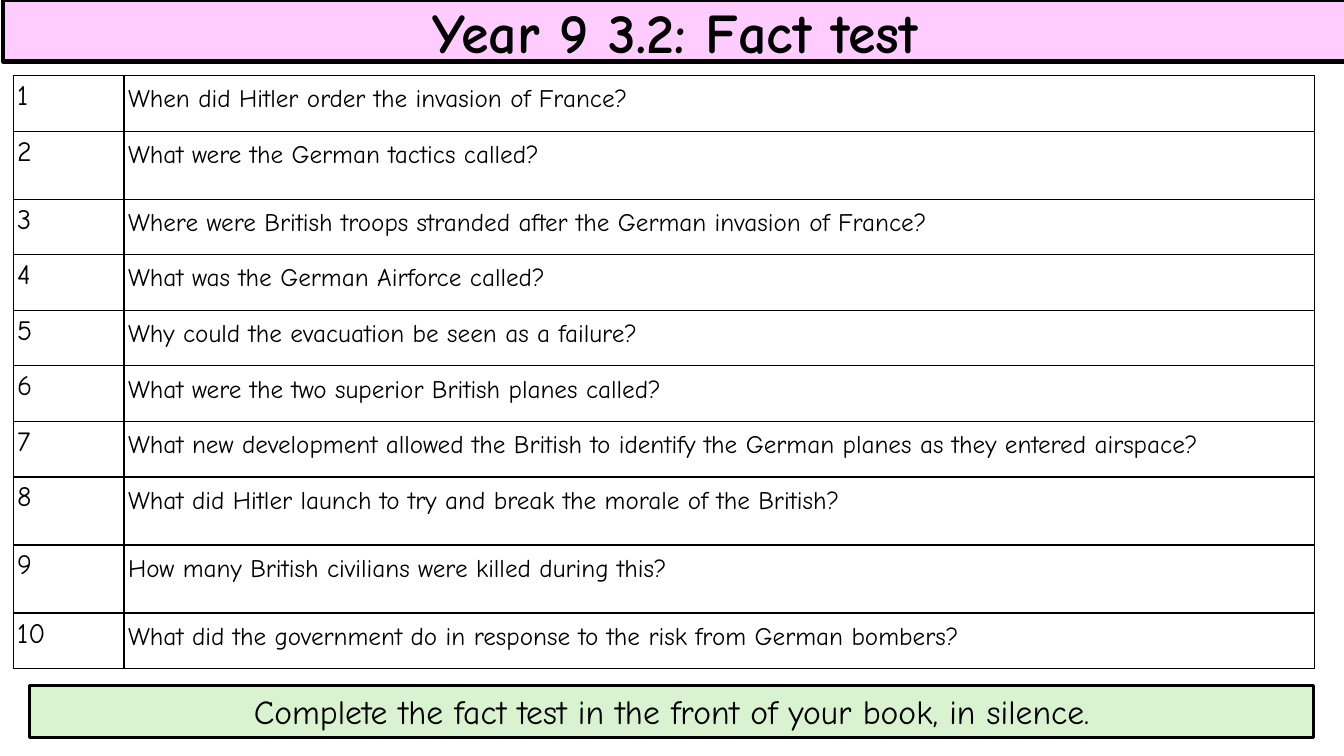
from collections import namedtuple

from lxml.etree import SubElement
from pptx import Presentation
from pptx.dml.color import RGBColor
from pptx.enum.shapes import MSO_SHAPE as Shape
from pptx.enum.text import MSO_ANCHOR as Anchor, MSO_AUTO_SIZE as AutoSize, PP_ALIGN as Align
from pptx.oxml.ns import qn
from pptx.util import Inches, Pt

BLACK = RGBColor(0x00, 0x00, 0x00)
WHITE = RGBColor(0xFF, 0xFF, 0xFF)
PINK = RGBColor(0xFF, 0xCC, 0xFF)
GREEN = RGBColor(0xD9, 0xF2, 0xD0)

WIDTH, HEIGHT = Inches(13.33), Inches(7.5)
Box = namedtuple("Box", "left top width height")

HEADING = "Year 9 3.2: Fact test"
TASK = "Complete the fact test in the front of your book, in silence."
QUESTIONS = [
    "When did Hitler order the invasion of France?",
    "What were the German tactics called?",
    "Where were British troops stranded after the German invasion of France?",
    "What was the German Airforce called?",
    "Why could the evacuation be seen as a failure?",
    "What were the two superior British planes called?",
    "What new development allowed the British to identify the German planes as they entered airspace?",
    "What did Hitler launch to try and break the morale of the British?",
    "How many British civilians were killed during this?",
    "What did the government do in response to the risk from German bombers?",
]
TALL_QUESTIONS = {2, 8, 9}
ROW_SHARE, TALL_ROW_SHARE = 7.35, 9
NUMBER_SHARE = 8.25

NUMBER_FORMAT = {
    "font": {"size": Pt(20)},
    "paragraph": {"line_spacing": 1.15, "space_after": Pt(10)},
    "cell": {"margin_top": 0, "margin_bottom": 0},
}
QUESTION_FORMAT = {
    "font": {"size": Pt(18)},
    "paragraph": {"line_spacing": 1.19, "space_after": Pt(6)},
    "cell": {"margin_top": Inches(0.04), "margin_bottom": Inches(0.04)},
}


def across(percent):
    """Turn a percentage of the slide's width into a length."""
    return int(WIDTH * percent / 100)


def down(percent):
    """Turn a percentage of the slide's height into a length."""
    return int(HEIGHT * percent / 100)


def place(left, top, width, height):
    """Make a box from percentages of the slide's size."""
    return Box(across(left), down(top), across(width), down(height))


def apply(target, values):
    """Set every attribute in values on the target."""
    for attribute, value in values.items():
        setattr(target, attribute, value)


def write(frame, words, font, paragraph):
    """Write one formatted paragraph in a text frame."""
    line = frame.paragraphs[0]
    apply(line, paragraph)
    run = line.add_run()
    run.text = words
    apply(run.font, {"name": "Comic Neue", "bold": False, **font})
    run.font.color.rgb = BLACK


def fill_banner(banner, words, colour, outline, font, anchor):
    """Colour and outline a banner and centre its words."""
    banner.fill.solid()
    banner.fill.fore_color.rgb = colour
    banner.line.color.rgb = BLACK
    banner.line.width = outline
    apply(banner.text_frame, {"word_wrap": True, "auto_size": AutoSize.NONE,
                              "vertical_anchor": anchor})
    write(banner.text_frame, words, font, {"alignment": Align.CENTER})


def add_heading(slide, box):
    """Place the slide's title across the top."""
    heading = slide.shapes.title
    apply(heading, box._asdict())
    fill_banner(heading, HEADING, PINK, Pt(3), {"size": Pt(40), "bold": True}, Anchor.MIDDLE)


def add_task(slide, box):
    """Place the instruction below the questions."""
    task = slide.shapes.add_shape(Shape.RECTANGLE, *box)
    task.shadow.inherit = False
    fill_banner(task, TASK, GREEN, Pt(2.25), {"size": Pt(24)}, Anchor.TOP)


def border_cell(cell):
    """Draw a thin black line on each side of a cell."""
    properties = cell._tc.get_or_add_tcPr()
    for side in ("a:lnL", "a:lnR", "a:lnT", "a:lnB"):
        edge = SubElement(properties, qn(side), w=str(Pt(1)))
        SubElement(SubElement(edge, qn("a:solidFill")), qn("a:srgbClr"), val=str(BLACK))


def fill_cell(cell, words, style):
    """Format one cell and write its words."""
    border_cell(cell)
    cell.fill.solid()
    cell.fill.fore_color.rgb = WHITE
    apply(cell, {"margin_left": Inches(0.04), "margin_right": Inches(0.04), **style["cell"]})
    write(cell.text_frame, words, style["font"], style["paragraph"])


def add_questions(slide, box):
    """Place the numbered questions in a two-column table."""
    questions = slide.shapes.add_table(len(QUESTIONS), 2, *box).table
    apply(questions, {"first_row": False, "horz_banding": False})
    questions.columns[0].width = across(NUMBER_SHARE)
    questions.columns[1].width = box.width - across(NUMBER_SHARE)
    for number, (row, question) in enumerate(zip(questions.rows, QUESTIONS), 1):
        row.height = down(TALL_ROW_SHARE if number in TALL_QUESTIONS else ROW_SHARE)
        fill_cell(row.cells[0], str(number), NUMBER_FORMAT)
        fill_cell(row.cells[1], question, QUESTION_FORMAT)


def main():
    """Build and save the fact test slide."""
    deck = Presentation()
    apply(deck, {"slide_width": WIDTH, "slide_height": HEIGHT})
    slide = deck.slides.add_slide(deck.slide_layouts.get_by_name("Title Only"))
    add_questions(slide, place(0.98, 10, 96.85, 78.45))
    add_heading(slide, place(0.23, 0, 100, 8.13))
    add_task(slide, place(2.18, 90.67, 95.57, 6.93))
    deck.save("out.pptx")


if __name__ == "__main__":
    main()
